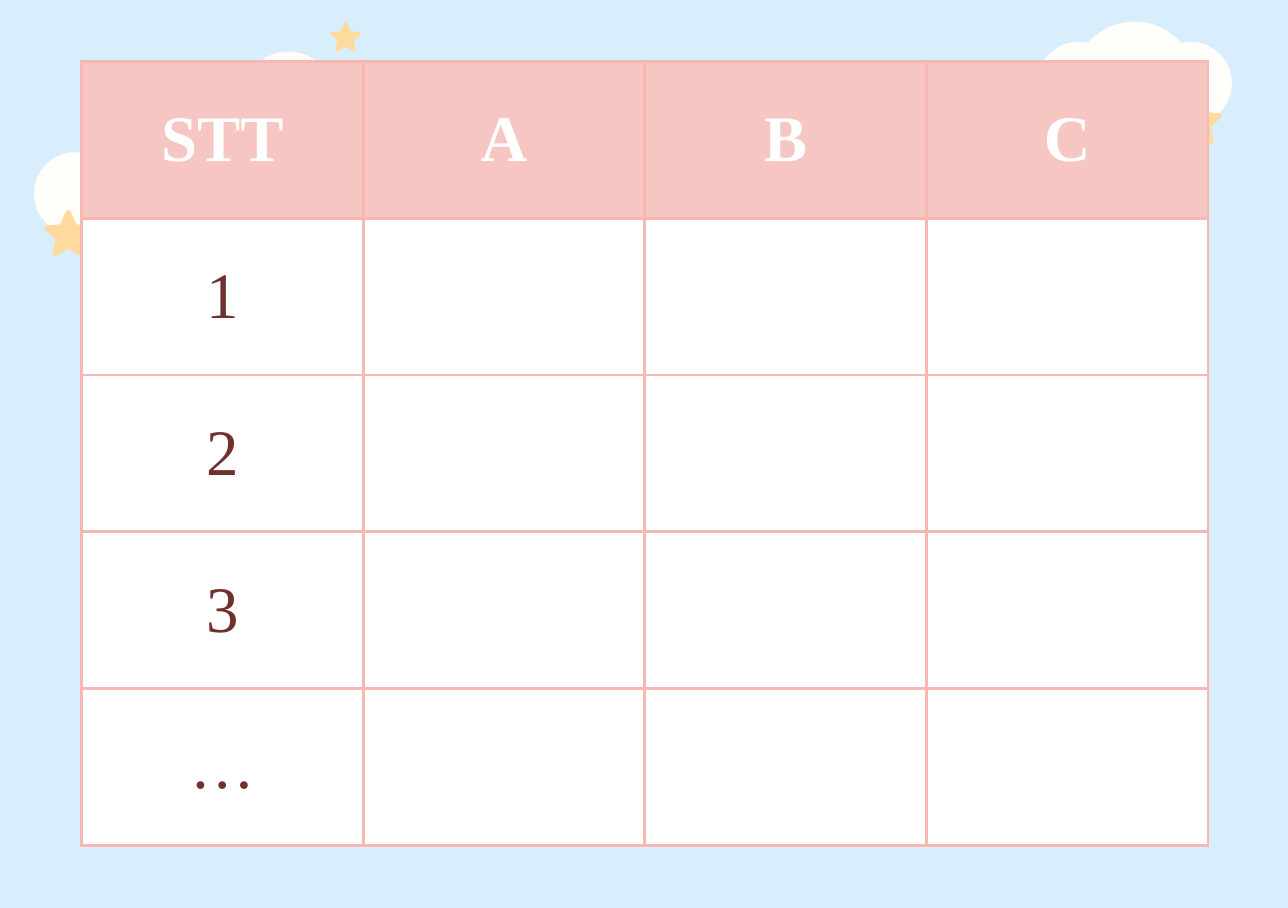
"""Build a pastel table slide with clouds and stars."""
import math

import lxml.etree
import pptx
import pptx.dml.color
import pptx.enum.text
import pptx.oxml.ns
import pptx.util

FONT = "Times New Roman"
SKY, CLOUD, STAR = "D9EEFC", "FFFEFA", "FFDA9F"
BORDER, HEADER, WHITE, BROWN = "F5B8B3", "F6C6C2", "FFFFFF", "70312E"

CLOUD_ARCS = [(0, 28.5, 222, 318), (25.8, 19.2, -106, 106),
              (0, 28.5, 42, 138), (-25.8, 19.2, 74, 286)]
STAR_PROFILE = [(-5.5, 0.95), (0, 1), (5.5, 0.95), (36, 0.53)]
CLOUDS = [(524.5, 38.5, 1), (60.7, 89.6, 1), (133.4, 45, 0.74)]
STARS = [(553.7, 56.8, 11.7), (31.6, 108.7, 11.7), (159.8, 17.6, 7.4)]

TABLE_LEFT, TABLE_TOP = 37.7, 28.4
COLUMN_WIDTH, ROW_HEIGHT = 130.2, 72.5
ROWS = [["STT", "A", "B", "C"], ["1", "", "", ""], ["2", "", "", ""],
        ["3", "", "", ""], ["…", "", "", ""]]


def color(value):
    """Return the colour for a hex string."""
    return pptx.dml.color.RGBColor.from_string(value)


def polar(center_x, center_y, radius, degrees):
    """Return the point at an angle and radius from a centre."""
    angle = math.radians(degrees)
    return (pptx.util.Pt(center_x + radius * math.cos(angle)),
            pptx.util.Pt(center_y + radius * math.sin(angle)))


def add_outline(slide, points, fill):
    """Add a closed, filled outline without a line."""
    builder = slide.shapes.build_freeform(*points[0], scale=1.0)
    builder.add_line_segments(points[1:], close=True)
    shape = builder.convert_to_shape()
    shape.shadow.inherit = False
    shape.fill.solid()
    shape.fill.fore_color.rgb = color(fill)
    shape.line.fill.background()


def add_cloud(slide, center_x, center_y, scale):
    """Add a cloud made of four arcs."""
    steps = 24
    points = [polar(center_x + offset * scale, center_y, radius * scale,
                    start + (end - start) * step / steps)
              for offset, radius, start, end in CLOUD_ARCS
              for step in range(steps + 1)]
    add_outline(slide, points, CLOUD)


def add_star(slide, center_x, center_y, radius):
    """Add a five-pointed star with blunt tips."""
    points = [polar(center_x, center_y, radius * ratio, 72 * tip - 90 + turn)
              for tip in range(5) for turn, ratio in STAR_PROFILE]
    add_outline(slide, points, STAR)


def add_borders(cell):
    """Draw a border on all four sides of a cell."""
    properties = cell._tc.get_or_add_tcPr()
    qualified = pptx.oxml.ns.qn
    for side in ("lnL", "lnR", "lnT", "lnB"):
        line = lxml.etree.SubElement(properties, qualified(f"a:{side}"),
                                     w=str(pptx.util.Pt(1.5)))
        fill = lxml.etree.SubElement(line, qualified("a:solidFill"))
        lxml.etree.SubElement(fill, qualified("a:srgbClr"), val=BORDER)


def format_cell(cell, text, is_header):
    """Fill a cell and set its centred text."""
    add_borders(cell)
    cell.fill.solid()
    cell.fill.fore_color.rgb = color(HEADER if is_header else WHITE)
    cell.vertical_anchor = pptx.enum.text.MSO_ANCHOR.MIDDLE
    cell.text_frame.text = text
    paragraph = cell.text_frame.paragraphs[0]
    paragraph.alignment = pptx.enum.text.PP_ALIGN.CENTER
    for run in paragraph.runs:
        run.font.name = FONT
        run.font.size = pptx.util.Pt(30)
        run.font.bold = is_header
        run.font.color.rgb = color(WHITE if is_header else BROWN)


def add_numbered_table(slide):
    """Add the table with its header and numbered rows."""
    row_count, column_count = len(ROWS), len(ROWS[0])
    table = slide.shapes.add_table(
        row_count, column_count,
        pptx.util.Pt(TABLE_LEFT), pptx.util.Pt(TABLE_TOP),
        pptx.util.Pt(COLUMN_WIDTH * column_count),
        pptx.util.Pt(ROW_HEIGHT * row_count)).table
    for row_index, texts in enumerate(ROWS):
        for column_index, text in enumerate(texts):
            format_cell(table.cell(row_index, column_index), text, row_index == 0)


def main():
    """Build and save the presentation."""
    presentation = pptx.Presentation()
    presentation.slide_width = pptx.util.Pt(595.44)
    presentation.slide_height = pptx.util.Pt(419.76)
    slide = presentation.slides.add_slide(presentation.slide_layouts[6])
    slide.background.fill.solid()
    slide.background.fill.fore_color.rgb = color(SKY)
    for cloud in CLOUDS:
        add_cloud(slide, *cloud)
    for star in STARS:
        add_star(slide, *star)
    add_numbered_table(slide)
    presentation.save("out.pptx")


if __name__ == "__main__":
    main()
